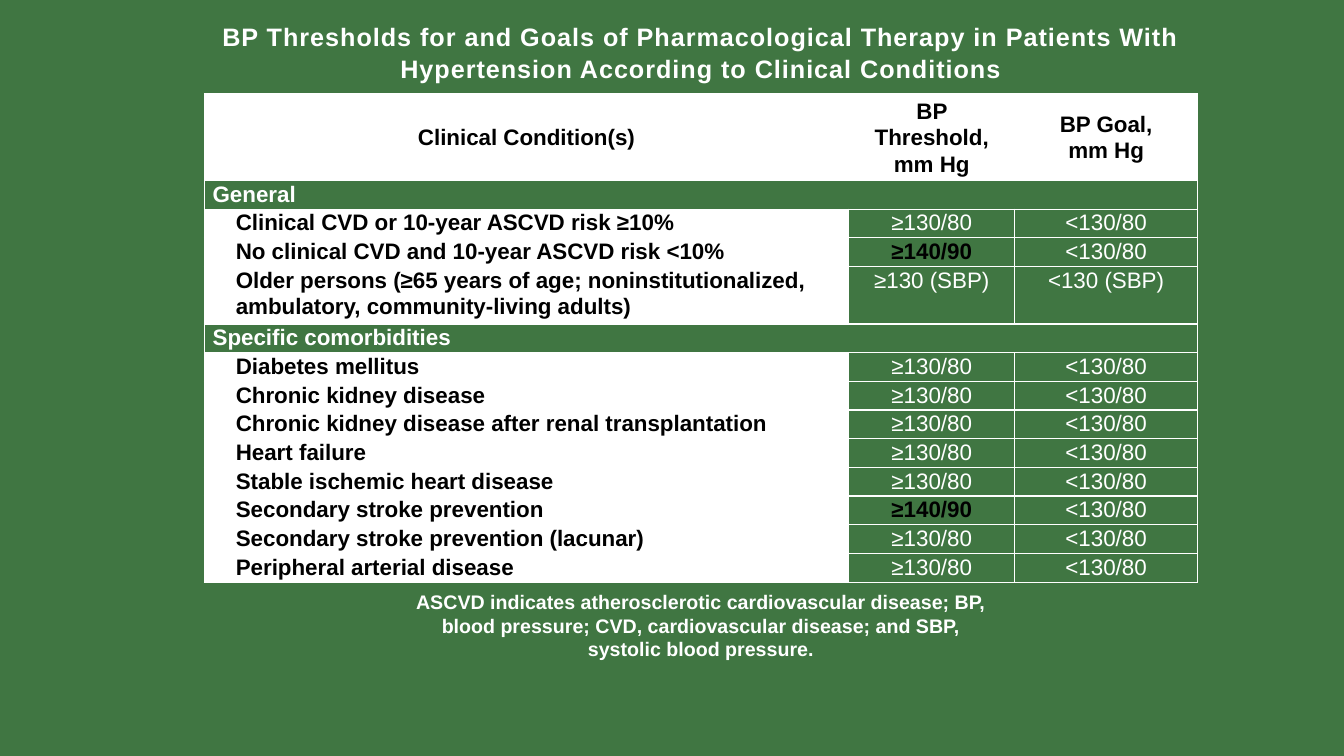
"""Build a slide with a table of blood pressure thresholds and goals."""
from lxml import etree
from pptx import Presentation
from pptx import util as u
from pptx.dml.color import RGBColor
from pptx.enum import text
from pptx.oxml import ns

GREEN, WHITE, BLACK = "407642", "FFFFFF", "000000"
MID, TOP = text.MSO_ANCHOR.MIDDLE, text.MSO_ANCHOR.TOP
LEFT, CENTER = text.PP_ALIGN.LEFT, text.PP_ALIGN.CENTER

LOW, HIGH, GOAL = "≥130/80", "≥140/90", "<130/80"
GROUPS = {
    "General": [
        ("Clinical CVD or 10-year ASCVD risk ≥10%", LOW, GOAL),
        ("No clinical CVD and 10-year ASCVD risk <10%", HIGH, GOAL),
        ("Older persons (≥65 years of age; noninstitutionalized, "
         "ambulatory, community-living adults)", "≥130 (SBP)", "<130 (SBP)"),
    ],
    "Specific comorbidities": [
        ("Diabetes mellitus", LOW, GOAL),
        ("Chronic kidney disease", LOW, GOAL),
        ("Chronic kidney disease after renal transplantation", LOW, GOAL),
        ("Heart failure", LOW, GOAL),
        ("Stable ischemic heart disease", LOW, GOAL),
        ("Secondary stroke prevention", HIGH, GOAL),
        ("Secondary stroke prevention (lacunar)", LOW, GOAL),
        ("Peripheral arterial disease", LOW, GOAL),
    ],
}


def px(n):
    return u.Emu(n * 4572)


def rgb(code):
    return RGBColor.from_string(code)


def assign(obj, vals):
    for key, val in vals.items():
        setattr(obj, key, val)


class Deck:
    """Hold the style and the current slide."""

    def __init__(self, wide, high):
        self.font = "Arial"
        self.prs = Presentation()
        assign(self.prs, {"slide_width": px(wide), "slide_height": px(high)})
        self.slide = self.prs.slides.add_slide(self.prs.slide_layouts[5])
        fill = self.slide.background.fill
        fill.solid()
        fill.fore_color.rgb = rgb(GREEN)

    def label(self, frame, words, size, color=WHITE, bold=True,
              align=CENTER, space=1.0, indent=0, track=0):
        frame.text = words
        for para in frame.paragraphs:
            assign(para, {"alignment": align, "line_spacing": space})
            if indent:
                props = para._p.get_or_add_pPr()
                props.set("marL", str(px(indent)))
                props.set("indent", "0")
            for run in para.runs:
                assign(run.font, {"name": self.font, "size": u.Pt(size), "bold": bold})
                run.font.color.rgb = rgb(color)
                if track:
                    run._r.get_or_add_rPr().set("spc", str(track))

    def place(self, shape, box):
        assign(shape, dict(zip(("left", "top", "width", "height"), map(px, box))))

    def title(self, box, words):
        shape = self.slide.shapes.title
        self.place(shape, box)
        frame = shape.text_frame
        assign(frame, {"word_wrap": True, "auto_size": text.MSO_AUTO_SIZE.NONE,
                       "vertical_anchor": TOP})
        self.label(frame, words, 18, space=1.05, track=70)

    def note(self, box, words):
        frame = self.slide.shapes.add_textbox(*map(px, box)).text_frame
        assign(frame, {"word_wrap": True, "vertical_anchor": MID,
                       "margin_left": px(24), "margin_right": px(24),
                       "margin_top": px(12), "margin_bottom": px(12)})
        self.label(frame, words, 14)

    def border(self, cell, color):
        props = cell._tc.get_or_add_tcPr()
        for spot, side in enumerate(("lnL", "lnR", "lnT", "lnB")):
            line = etree.Element(ns.qn(f"a:{side}"), w=str(u.Pt(1)))
            solid = etree.SubElement(line, ns.qn("a:solidFill"))
            etree.SubElement(solid, ns.qn("a:srgbClr"), val=color)
            props.insert(spot, line)

    def cell(self, cell, words, fill, anchor=TOP, **style):
        assign(cell, {"margin_left": px(16), "margin_right": px(16),
                      "margin_top": 0, "margin_bottom": 0,
                      "vertical_anchor": anchor})
        cell.fill.solid()
        cell.fill.fore_color.rgb = rgb(fill)
        self.border(cell, WHITE)
        self.label(cell.text_frame, words, 16, space=1.07, **style)

    def table(self, left, top, cols, rows):
        box = map(px, (left, top, sum(cols), sum(rows)))
        grid = self.slide.shapes.add_table(len(rows), len(cols), *box).table
        assign(grid, {"first_row": False, "horz_banding": False})
        for col, wide in zip(grid.columns, cols):
            col.width = px(wide)
        for row, high in zip(grid.rows, rows):
            row.height = px(high)
        return grid


def main():
    deck = Deck(2667, 1500)
    deck.title((318, 30, 2146, 154),
               "BP Thresholds for and Goals of Pharmacological Therapy in "
               "Patients With Hypertension According to Clinical Conditions")

    unit = 57
    highs = [172]
    for items in GROUPS.values():
        highs.append(unit)
        highs += [unit * (2 if len(item[0]) > 60 else 1) for item in items]
    grid = deck.table(406, 186, (1278, 330, 362), highs)

    heads = ("Clinical Condition(s)", "BP Threshold, mm Hg", "BP Goal,\nmm Hg")
    for col, head in enumerate(heads):
        deck.cell(grid.cell(0, col), head, WHITE, MID, color=BLACK)

    row = 1
    for group, items in GROUPS.items():
        for col, words in enumerate((group, "", "")):
            deck.cell(grid.cell(row, col), words, GREEN, align=LEFT)
        grid.cell(row, 0).merge(grid.cell(row, 2))
        for row, (name, *values) in enumerate(items, row + 1):
            deck.cell(grid.cell(row, 0), name, WHITE, color=BLACK,
                      align=LEFT, indent=46)
            for col, value in enumerate(values, 1):
                bold = value == HIGH
                deck.cell(grid.cell(row, col), value, GREEN, bold=bold,
                          color=BLACK if bold else WHITE)
        row += 1

    deck.note((782, 1158, 1218, 166),
              "ASCVD indicates atherosclerotic cardiovascular disease; BP, blood "
              "pressure; CVD, cardiovascular disease; and SBP, systolic blood pressure.")
    deck.prs.save("out.pptx")


if __name__ == "__main__":
    main()
